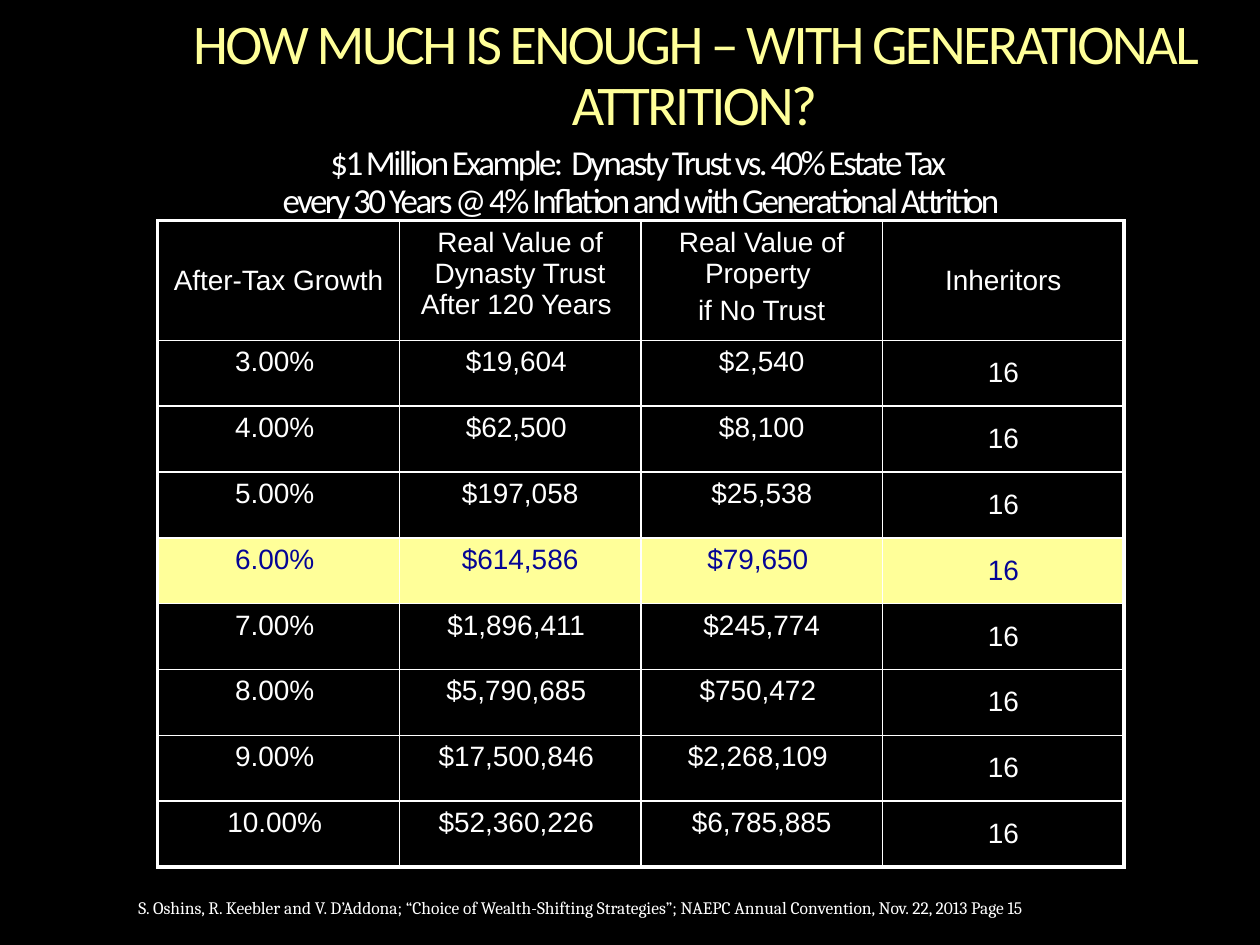
from copy import deepcopy

from lxml.etree import SubElement
from pptx import Presentation
from pptx.dml.color import RGBColor
from pptx.enum.text import MSO_ANCHOR, PP_ALIGN
from pptx.oxml.ns import qn
from pptx.util import Cm, Pt

COLORS = {
    "background": "000000",
    "text": "FFFFFF",
    "heading": "FFFF99",
    "highlight": "FFFF99",
    "highlight_text": "050595",
    "border": "FFFFFF",
}
HEADERS = [
    "After-Tax Growth ",
    "Real Value of Dynasty Trust\vAfter 120 Years ",
    "Real Value of Property \nif No Trust",
    "Inheritors",
]
GROWTH_ROWS = [
    ("3.00% ", "$19,604 ", "$2,540"),
    ("4.00% ", "$62,500 ", "$8,100"),
    ("5.00% ", "$197,058", "$25,538"),
    ("6.00% ", "$614,586", "$79,650 "),
    ("7.00% ", "$1,896,411 ", "$245,774"),
    ("8.00% ", "$5,790,685 ", "$750,472 "),
    ("9.00% ", "$17,500,846 ", "$2,268,109 "),
    ("10.00% ", "$52,360,226 ", "$6,785,885"),
]
INHERITORS = "16"
HIGHLIGHTED_GROWTH = "6.00% "


def rgb(name):
    return RGBColor.from_string(COLORS[name])


def write_text(text_frame, text, size, font, color="text", align=PP_ALIGN.CENTER,
               line_spacing=None, tracking=None, gap=0):
    text_frame.word_wrap = True
    for index, line in enumerate(text.split("\n")):
        paragraph = text_frame.add_paragraph() if index else text_frame.paragraphs[0]
        paragraph.text = line
        paragraph.alignment = align
        paragraph.line_spacing = line_spacing
        if index:
            paragraph.space_before = Pt(gap)
        for run in paragraph.runs:
            run.font.size = Pt(size)
            run.font.name = font
            run.font.color.rgb = rgb(color)
            if tracking is not None:
                run.font._element.set("spc", str(int(tracking * 100)))
        for line_break in paragraph._p.findall(qn("a:br")):
            line_break.insert(0, deepcopy(paragraph.runs[0].font._element))


def set_border(cell, side, width):
    line = SubElement(cell._tc.get_or_add_tcPr(), qn(f"a:ln{side}"), w=str(Pt(width)))
    fill = SubElement(line, qn("a:solidFill"))
    SubElement(fill, qn("a:srgbClr"), val=COLORS["border"])


def add_heading(slide, left, top, width, height):
    box = slide.shapes.add_textbox(left, top, width, height)
    write_text(box.text_frame, "HOW MUCH IS ENOUGH – WITH GENERATIONAL ATTRITION?",
               32, "Calibri", color="heading", line_spacing=0.9, tracking=-1.5)


def add_example_title(slide, left, top, width, height):
    title = slide.shapes.title
    title.left, title.top, title.width, title.height = left, top, width, height
    frame = title.text_frame
    frame.margin_left = frame.margin_right = frame.margin_top = frame.margin_bottom = 0
    frame.vertical_anchor = MSO_ANCHOR.BOTTOM
    write_text(frame, "$1 Million Example:  Dynasty Trust vs. 40% Estate Tax \v"
               "every 30 Years @ 4% Inflation and with Generational Attrition",
               20, "Calibri", line_spacing=0.9, tracking=-1.5)


def add_growth_table(slide, left, top, width, height):
    rows = [HEADERS] + [(*row, INHERITORS) for row in GROWTH_ROWS]
    last_row, last_column = len(rows) - 1, len(HEADERS) - 1
    table = slide.shapes.add_table(len(rows), len(HEADERS), left, top, width, height).table
    table.first_row = table.horz_banding = False
    header_height = Cm(2.41)
    for index, table_row in enumerate(table.rows):
        table_row.height = (height - header_height) // last_row if index else header_height
    for row_index, values in enumerate(rows):
        highlighted = values[0] == HIGHLIGHTED_GROWTH
        for column_index, text in enumerate(values):
            cell = table.cell(row_index, column_index)
            outer_sides = {
                "L": column_index == 0,
                "R": column_index == last_column,
                "T": row_index == 0,
                "B": row_index == last_row,
            }
            for side, outer in outer_sides.items():
                set_border(cell, side, 2.25 if outer else 1)
            if highlighted:
                cell.fill.solid()
                cell.fill.fore_color.rgb = rgb("highlight")
            else:
                cell.fill.background()
            centered = column_index == last_column or (row_index, column_index) == (0, 0)
            cell.vertical_anchor = MSO_ANCHOR.MIDDLE if centered else MSO_ANCHOR.TOP
            write_text(cell.text_frame, text, 16, "Arial", gap=3.2,
                       color="highlight_text" if highlighted else "text")


def add_citation(slide, left, top, width, height):
    box = slide.shapes.add_textbox(left, top, width, height)
    write_text(box.text_frame, "S. Oshins, R. Keebler and V. D’Addona; “Choice of "
               "Wealth-Shifting Strategies”; NAEPC Annual Convention, Nov. 22, 2013 Page 15",
               10, "Cambria", align=PP_ALIGN.LEFT)


def main():
    presentation = Presentation()
    presentation.slide_width, presentation.slide_height = Cm(25.4), Cm(19.05)
    slide = presentation.slides.add_slide(presentation.slide_layouts[5])
    slide.background.fill.solid()
    slide.background.fill.fore_color.rgb = rgb("background")
    add_example_title(slide, Cm(1.27), Cm(2.9), Cm(23.29), Cm(1.55))
    add_growth_table(slide, Cm(3.18), Cm(4.45), Cm(19.48), Cm(13.03))
    add_citation(slide, Cm(2.54), Cm(17.96), Cm(20.75), Cm(0.69))
    add_heading(slide, Cm(1.3), Cm(0.2), Cm(25.4), Cm(1.85))
    presentation.save("out.pptx")


if __name__ == "__main__":
    main()
